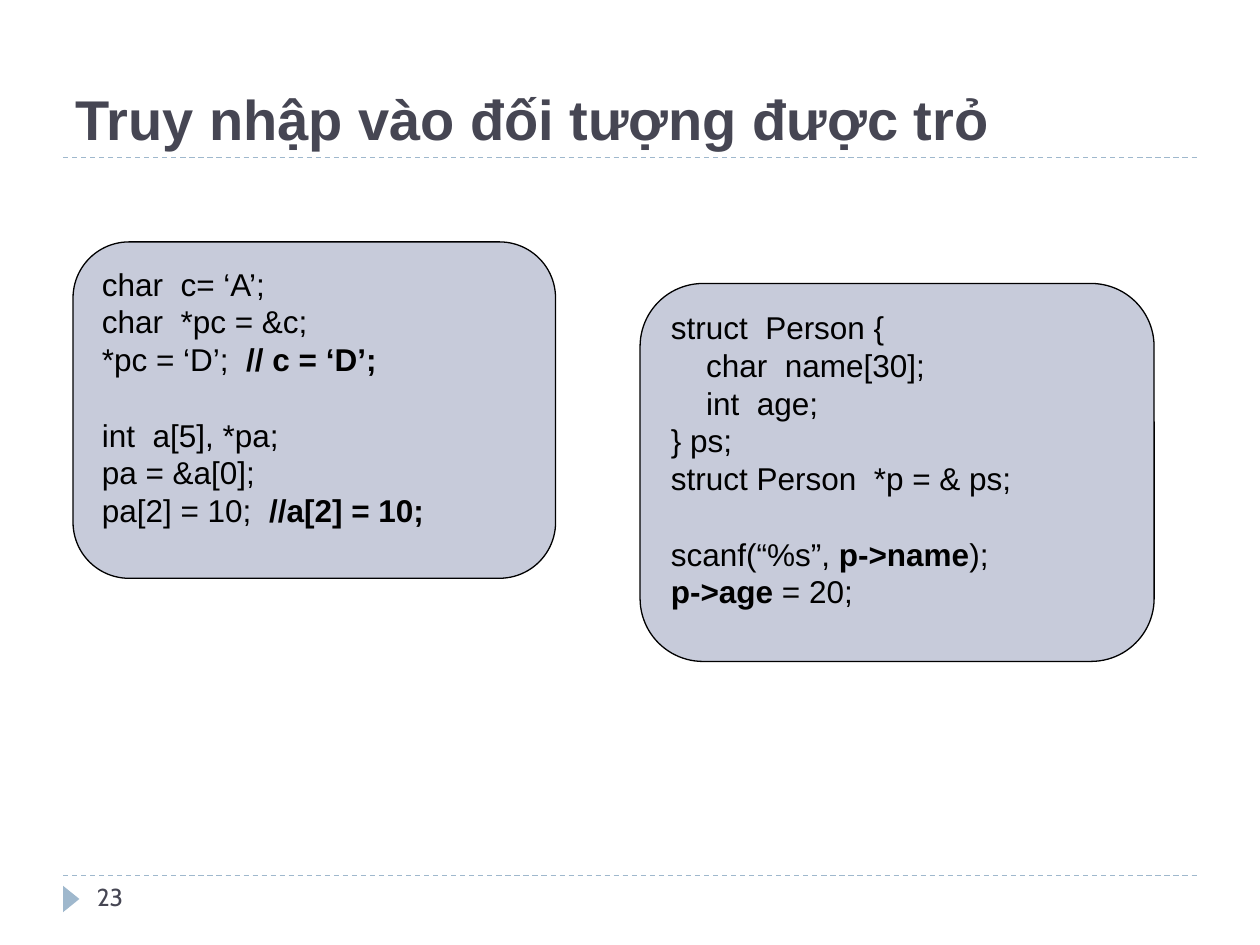
from lxml import etree
from pptx import Presentation
from pptx import util as u
from pptx.dml.color import RGBColor
from pptx.enum import dml, shapes, text
from pptx.oxml.ns import qn

WIDTH, HEIGHT = 10, 7.5
MARGIN = 0.05 * WIDTH
INK, ACCENT, PANEL, BLACK = "464653", "9FB8CD", "C7CBDA", "000000"
BLANK_LINE = 21.5
CODE_INDENT = 0.28

# Each line is a list of (text, bold) parts; blocks are parted by a blank line,
# and a leading tab marks an indented line.
POINTER_CODE = [
    [[("char  c= ‘A’;", False)],
     [("char  *pc = &c;", False)],
     [("*pc = ‘D’;  ", False), ("// c = ‘D’;", True)]],
    [[("int  a[5], *pa;", False)],
     [("pa = &a[0];", False)],
     [("pa[2] = 10;  ", False), ("//a[2] = 10;", True)]],
]
STRUCT_CODE = [
    [[("struct  Person {", False)],
     [("\tchar  name[30];", False)],
     [("\tint  age;", False)],
     [("} ps;", False)],
     [("struct Person  *p = & ps;", False)]],
    [[("scanf(“%s”, ", False), ("p->name", True), (");", False)],
     [("p->age", True), (" = 20;", False)]],
]


def color(value):
    return RGBColor.from_string(value)


def inches(box):
    return [u.Inches(length) for length in box]


def style(span, size, ink, font="Arial", bold=False):
    span.font.name, span.font.size, span.font.bold = font, u.Pt(size), bold
    span.font.color.rgb = color(ink)


def add_rule(page, y):
    rule = page.shapes.add_connector(
        shapes.MSO_CONNECTOR.STRAIGHT, *inches((MARGIN, y, WIDTH - MARGIN, y)))
    rule.line.color.rgb = color(ACCENT)
    rule.line.width = u.Pt(0.75)
    rule.line.dash_style = dml.MSO_LINE.DASH
    etree.SubElement(rule._element.spPr, qn("a:effectLst"))


def add_label(page, box, words, anchor, **look):
    label = page.shapes.add_textbox(*inches(box))
    frame = label.text_frame
    frame.word_wrap = True
    frame.vertical_anchor = anchor
    frame.text = words
    style(frame.paragraphs[0].runs[0], **look)


def add_header(page, box):
    left, top, width, height = box
    add_rule(page, top + height)
    add_label(page, box, "Truy nhập vào đối tượng được trỏ",
              text.MSO_ANCHOR.BOTTOM, size=32, ink=INK, bold=True)


def add_footer(page, box):
    left, top, width, height = box
    add_rule(page, top)
    marker = page.shapes.add_shape(
        shapes.MSO_SHAPE.ISOSCELES_TRIANGLE,
        *inches((left - 0.04, top + 0.12, 0.21, 0.13)))
    marker.rotation = 90
    marker.shadow.inherit = False
    marker.fill.solid()
    marker.fill.fore_color.rgb = color(ACCENT)
    marker.line.fill.background()
    add_label(page, (left + 0.17, top, 2.17, height), "23",
              text.MSO_ANCHOR.TOP, size=14, ink=INK, font="Cabin")


def add_code_line(para, parts):
    para.alignment = text.PP_ALIGN.LEFT
    if parts[0][0].startswith("\t"):
        para._p.get_or_add_pPr().set("marL", str(u.Inches(CODE_INDENT)))
    for words, bold in parts:
        span = para.add_run()
        span.text = words.lstrip("\t")
        style(span, 18, BLACK, bold=bold)


def add_code_panel(page, box, blocks):
    panel = page.shapes.add_shape(
        shapes.MSO_SHAPE.ROUNDED_RECTANGLE, *inches(box))
    panel.shadow.inherit = False
    panel.fill.solid()
    panel.fill.fore_color.rgb = color(PANEL)
    panel.line.color.rgb = color(BLACK)
    panel.line.width = u.Pt(0.75)
    frame = panel.text_frame
    frame.word_wrap = True
    frame.vertical_anchor = text.MSO_ANCHOR.TOP
    para = frame.paragraphs[0]
    for block_number, block in enumerate(blocks):
        for line_number, parts in enumerate(block):
            if block_number or line_number:
                para = frame.add_paragraph()
            if block_number and not line_number:
                para.space_before = u.Pt(BLANK_LINE)
            add_code_line(para, parts)


def main():
    deck = Presentation()
    deck.slide_width, deck.slide_height = inches((WIDTH, HEIGHT))
    page = deck.slides.add_slide(deck.slide_layouts[6])
    add_header(page, (MARGIN, 0.25, WIDTH - 2 * MARGIN, 1))
    add_footer(page, (MARGIN, 6.95, WIDTH - 2 * MARGIN, 0.4))
    add_code_panel(page, (0.58, 1.92, 3.83, 2.67), POINTER_CODE)
    add_code_panel(page, (5.08, 2.25, 4.08, 3), STRUCT_CODE)
    deck.save("out.pptx")


if __name__ == "__main__":
    main()
